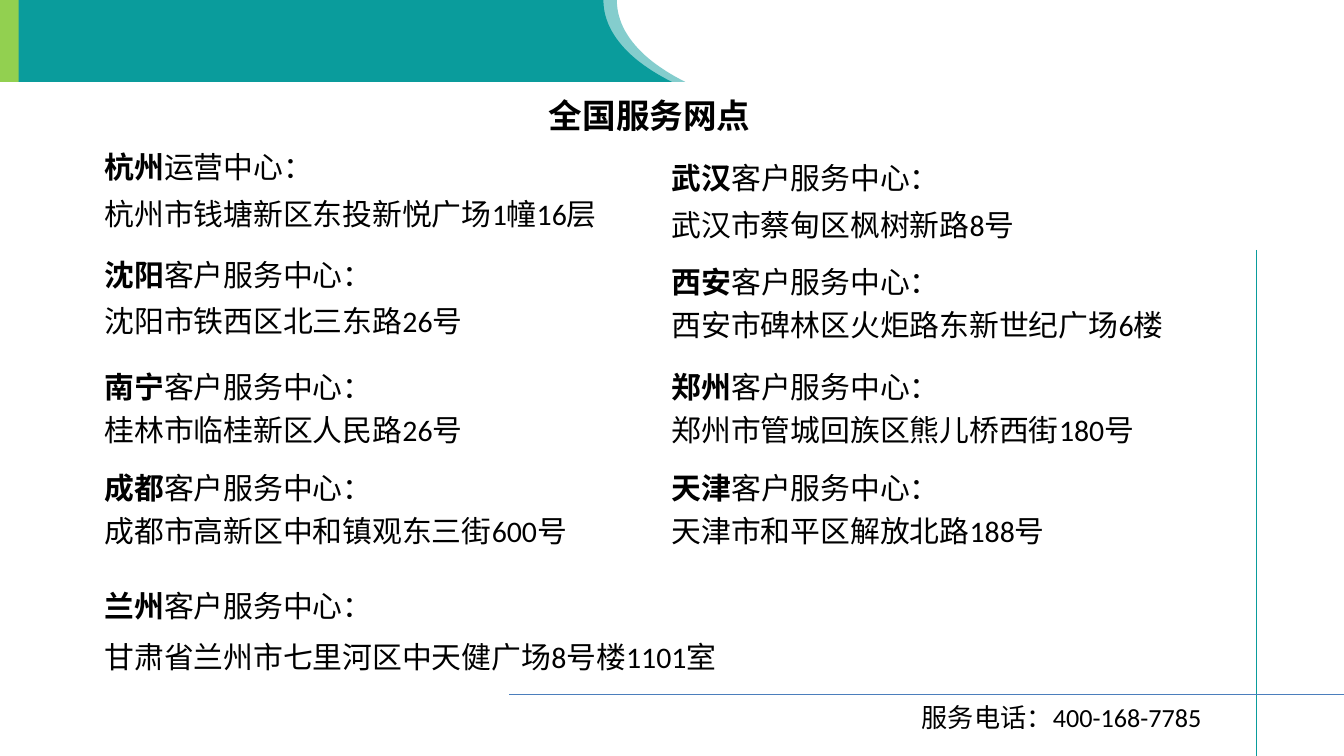
import pptx
import pptx.dml.color
import pptx.enum.shapes
import pptx.enum.text
import pptx.oxml
import pptx.oxml.ns
import pptx.util

RGB = pptx.dml.color.RGBColor
TEAL = RGB(0x0A, 0x9C, 0x9C)
GREEN = RGB(0x92, 0xD0, 0x50)
BLUE = RGB(0x4B, 0x7E, 0xBC)
BLACK = RGB(0, 0, 0)
FONT = "Calibri"
WIDE = 10
HIGH = WIDE * 9 / 16
BAND = 0.61
LEFT, RIGHT = 0.68, 4.9
COL = 4.44
INCH = pptx.util.Inches

# left, top, width, height, line spacing, city, kind of centre, address
SITES = [
    (LEFT, 0.98, COL, 0.8, 1.3, "杭州", "运营中心：", "杭州市钱塘新区东投新悦广场1幢16层"),
    (LEFT, 1.78, COL, 0.8, 1.3, "沈阳", "客户服务中心：", "沈阳市铁西区北三东路26号"),
    (LEFT, 2.64, COL, 0.75, 1.2, "南宁", "客户服务中心：", "桂林市临桂新区人民路26号"),
    (LEFT, 3.39, COL, 0.75, 1.2, "成都", "客户服务中心：", "成都市高新区中和镇观东三街600号"),
    (LEFT, 4.22, 6.5, 0.85, 1.4, "兰州", "客户服务中心：",
     "甘肃省兰州市七里河区中天健广场8号楼1101室"),
    (RIGHT, 1.06, COL, 0.8, 1.3, "武汉", "客户服务中心：", "武汉市蔡甸区枫树新路8号"),
    (RIGHT, 1.86, COL, 0.75, 1.2, "西安", "客户服务中心：", "西安市碑林区火炬路东新世纪广场6楼"),
    (RIGHT, 2.64, COL, 0.75, 1.2, "郑州", "客户服务中心：", "郑州市管城回族区熊儿桥西街180号"),
    (RIGHT, 3.39, COL, 0.75, 1.2, "天津", "客户服务中心：", "天津市和平区解放北路188号"),
]


def paint(shape, color, alpha=None):
    shape.shadow.inherit = False
    shape.fill.solid()
    shape.fill.fore_color.rgb = color
    shape.line.fill.background()
    if alpha:
        tint = shape._element.spPr.find(".//" + pptx.oxml.ns.qn("a:srgbClr"))
        tint.append(pptx.oxml.parse_xml(
            f'<a:alpha {pptx.oxml.ns.nsdecls("a")} val="{alpha * 1000}"/>'))


def curve(start, ends, steps=24):
    """Points on a cubic curve from start through the two handles to the end."""
    knots = [start, *ends]
    for step in range(1, steps + 1):
        t = step / steps
        parts = ((1 - t) ** 3, 3 * t * (1 - t) ** 2, 3 * t * t * (1 - t), t ** 3)
        yield tuple(sum(w * k[axis] for w, k in zip(parts, knots)) for axis in (0, 1))


def wave(slide, left, alpha=None):
    """Header band with a curved right end."""
    edge = left + 4.49
    bend = curve((edge, 0), [(edge, 0.24), (edge + 0.19, 0.45), (left + 5, BAND)])
    points = [(edge, 0), *bend, (left, BAND)]
    pen = slide.shapes.build_freeform(INCH(left), 0)
    pen.add_line_segments([(INCH(x), INCH(y)) for x, y in points], close=True)
    paint(pen.convert_to_shape(), TEAL, alpha)


def rule(slide, start, end, color):
    line = slide.shapes.add_connector(
        pptx.enum.shapes.MSO_CONNECTOR.STRAIGHT,
        *(INCH(n) for n in (*start, *end)))
    line.line.color.rgb = color
    line.line.width = pptx.util.Pt(0.75)
    line._element.spPr.append(
        pptx.oxml.parse_xml(f'<a:effectLst {pptx.oxml.ns.nsdecls("a")}/>'))


def style(run, size, bold=False):
    run.font.name = FONT
    run.font.size = pptx.util.Pt(size)
    run.font.bold = bold
    run.font.color.rgb = BLACK


def place(shape, left, top, width, height):
    shape.left, shape.top = INCH(left), INCH(top)
    shape.width, shape.height = INCH(width), INCH(height)


def head(slide, text):
    title = slide.shapes.title
    place(title, 3.98, 0.66, 1.71, 0.4)
    frame = title.text_frame
    frame.text = text
    frame.word_wrap = False
    frame.auto_size = pptx.enum.text.MSO_AUTO_SIZE.NONE
    frame.vertical_anchor = pptx.enum.text.MSO_ANCHOR.TOP
    frame.paragraphs[0].alignment = pptx.enum.text.PP_ALIGN.CENTER
    style(frame.paragraphs[0].runs[0], 18, True)


def label(slide, left, top, width, height, text, size):
    box = slide.shapes.add_textbox(0, 0, 0, 0)
    place(box, left, top, width, height)
    frame = box.text_frame
    frame.word_wrap = True
    frame.text = text
    for para in frame.paragraphs:
        for run in para.runs:
            style(run, size)
    return frame


def site(slide, left, top, width, height, space, city, kind, street):
    frame = label(slide, left, top, width, height, f"{city}\n{street}", 16)
    first = frame.paragraphs[0]
    first.runs[0].font.bold = True
    tail = first.add_run()
    tail.text = kind
    style(tail, 16)
    for para in frame.paragraphs:
        para.line_spacing = space


def main():
    deck = pptx.Presentation()
    deck.slide_width, deck.slide_height = INCH(WIDE), INCH(HIGH)
    slide = deck.slides.add_slide(deck.slide_layouts[5])
    wave(slide, 0.1, 50)
    wave(slide, 0)
    bar = slide.shapes.add_shape(
        pptx.enum.shapes.MSO_SHAPE.RECTANGLE, 0, 0, INCH(0.14), INCH(BAND))
    paint(bar, GREEN)
    rule(slide, (9.35, 1.86), (9.35, 6.05), TEAL)
    rule(slide, (3.79, 5.17), (WIDE, 5.17), BLUE)
    head(slide, "全国服务网点")
    for row in SITES:
        site(slide, *row)
    label(slide, 6.76, 5.17, 2.9, 0.34, "服务电话：400-168-7785", 14)
    deck.save("out.pptx")


if __name__ == "__main__":
    main()
